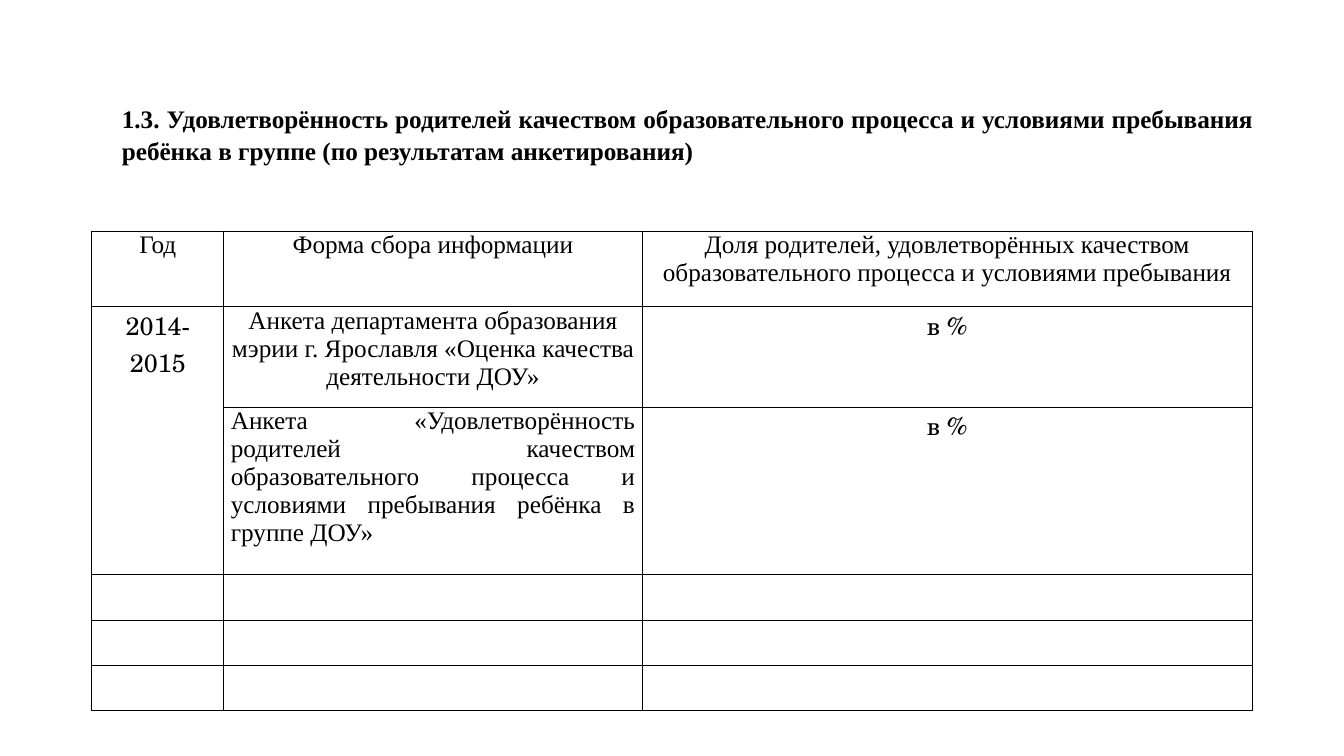
"""Build a slide with a survey table on parent satisfaction."""
import dataclasses
import typing

import lxml.etree
import pptx
import pptx.dml.color
import pptx.enum.text
import pptx.oxml.ns
import pptx.util

Inches = pptx.util.Inches
Pt = pptx.util.Pt
Align = pptx.enum.text.PP_ALIGN
BLACK = pptx.dml.color.RGBColor(0, 0, 0)
TIMES = "Times New Roman"
SCHOLA = "TeX Gyre Schola"
COLS = (1.31, 4.15, 6.05)
ROWS = (0.75, 1, 1.66, 0.45, 0.45, 0.45)
LEFT, TOP = 0.91, 2.29
PAD = {
    "margin_left": Inches(0.07),
    "margin_right": Inches(0.07),
    "margin_top": 0,
    "margin_bottom": 0,
}


@dataclasses.dataclass(frozen=True)
class Entry:
    row: int
    col: int
    text: str
    face: str = TIMES
    align: typing.Any = Align.CENTER


ENTRIES = (
    Entry(0, 0, "Год"),
    Entry(0, 1, "Форма сбора информации"),
    Entry(0, 2, "Доля родителей, удовлетворённых качеством образовательного "
                "процесса и условиями пребывания"),
    Entry(1, 0, "2014-2015", SCHOLA),
    Entry(1, 1, "Анкета департамента образования мэрии г. Ярославля "
                "«Оценка качества деятельности ДОУ»"),
    Entry(1, 2, "в %", SCHOLA),
    Entry(2, 1, "Анкета «Удовлетворённость родителей качеством образовательного "
                "процесса и условиями пребывания ребёнка в группе ДОУ»",
          align=Align.JUSTIFY),
    Entry(2, 2, "в %", SCHOLA),
)


def apply(item: typing.Any, form: dict[str, typing.Any]) -> None:
    """Set each named attribute on the item."""
    for name, value in form.items():
        setattr(item, name, value)


def write(frame: typing.Any, text: str, face: str, align: typing.Any,
          space: typing.Any, bold: bool = False) -> None:
    """Write one formatted paragraph into a text frame."""
    para = frame.paragraphs[0]
    run = para.add_run()
    run.text = text
    apply(para, {"alignment": align, "line_spacing": space})
    apply(run.font, {"name": face, "size": Pt(18), "bold": bold})
    run.font.color.rgb = BLACK


def border(cell: typing.Any) -> None:
    """Draw thin black lines on all four sides of a cell."""
    qn = pptx.oxml.ns.qn
    props = cell._tc.get_or_add_tcPr()
    for spot, side in enumerate("LRTB"):
        line = lxml.etree.Element(qn(f"a:ln{side}"), w=str(Pt(0.5)))
        fill = lxml.etree.SubElement(line, qn("a:solidFill"))
        lxml.etree.SubElement(fill, qn("a:srgbClr"), val=str(BLACK))
        props.insert(spot, line)


def add_title(slide: typing.Any) -> None:
    """Add the section heading."""
    box = slide.shapes.add_textbox(
        Inches(1.11), Inches(0.95), Inches(11.42), Inches(0.71))
    box.text_frame.word_wrap = True
    write(box.text_frame,
          "1.3. Удовлетворённость родителей качеством образовательного процесса "
          "и условиями пребывания ребёнка в группе (по результатам анкетирования)",
          TIMES, Align.JUSTIFY, 1.07, True)


def add_survey(slide: typing.Any) -> None:
    """Add the survey table."""
    table = slide.shapes.add_table(
        len(ROWS), len(COLS), Inches(LEFT), Inches(TOP),
        Inches(sum(COLS)), Inches(sum(ROWS))).table
    apply(table, {"first_row": False, "horz_banding": False})
    for col, width in zip(table.columns, COLS):
        col.width = Inches(width)
    for row, height in zip(table.rows, ROWS):
        row.height = Inches(height)
    for cell in table.iter_cells():
        cell.fill.background()
        border(cell)
    table.cell(1, 0).merge(table.cell(2, 0))
    for entry in ENTRIES:
        cell = table.cell(entry.row, entry.col)
        apply(cell, PAD)
        space = Pt(20) if entry.face == TIMES else 1.0
        write(cell.text_frame, entry.text, entry.face, entry.align, space)


def main() -> None:
    """Build and save the deck."""
    deck = pptx.Presentation()
    apply(deck, {"slide_width": Inches(13.33), "slide_height": Inches(7.5)})
    slide = deck.slides.add_slide(deck.slide_layouts[6])
    add_title(slide)
    add_survey(slide)
    deck.save("out.pptx")


if __name__ == "__main__":
    main()
